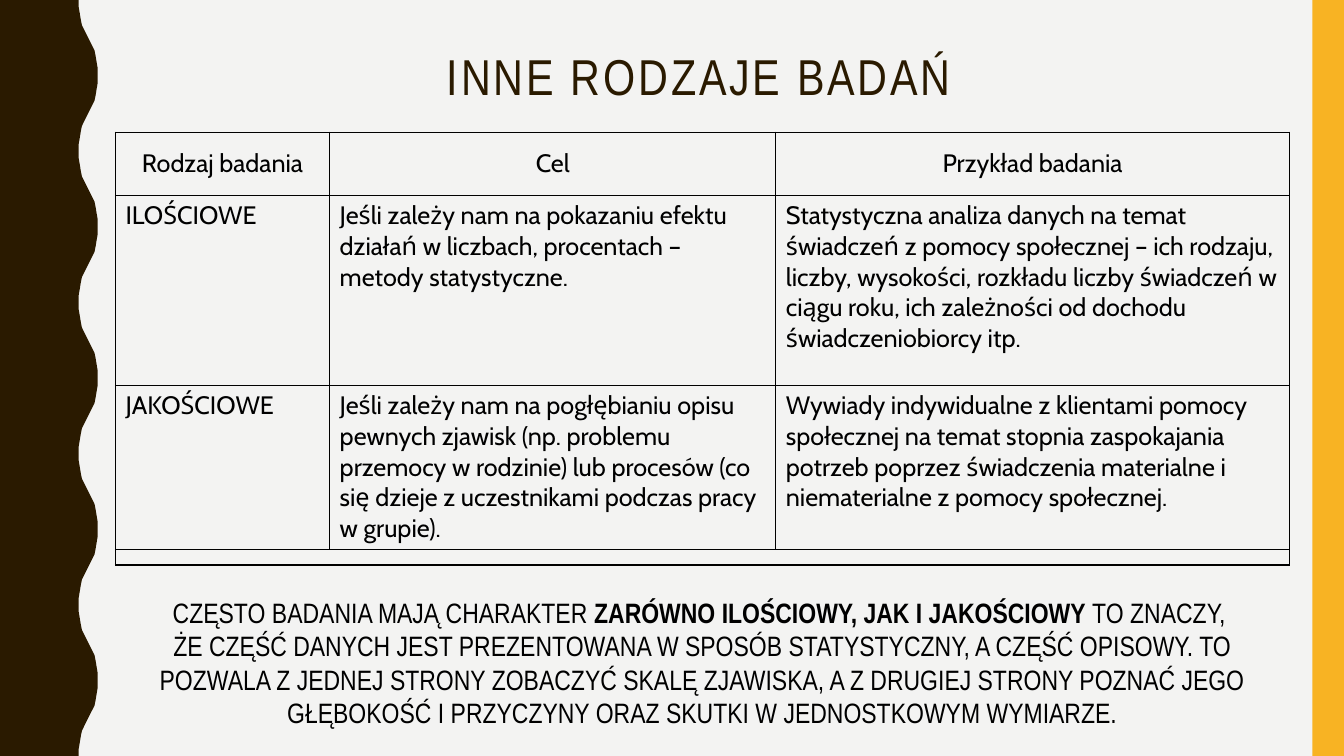
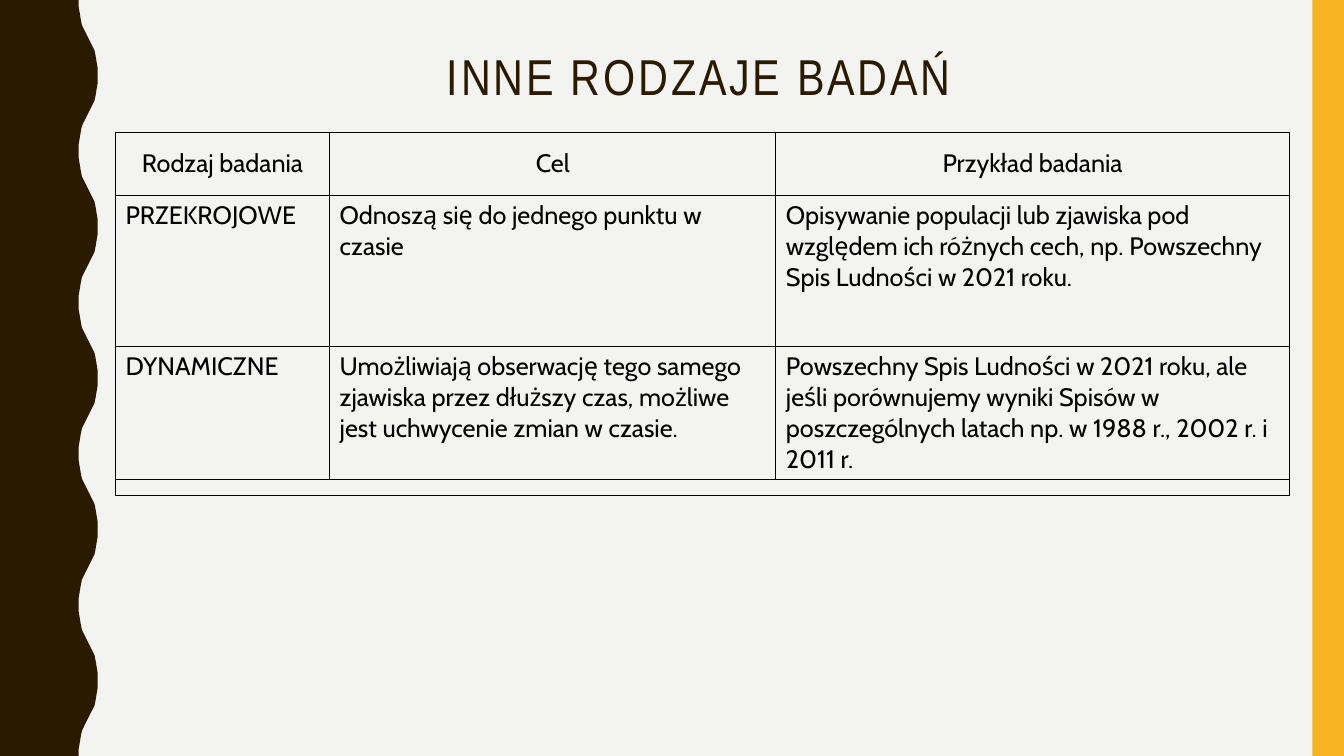
from dataclasses import dataclass

from lxml import etree
from pptx import Presentation
from pptx.dml.color import RGBColor
from pptx.enum.shapes import MSO_SHAPE
from pptx.enum.text import MSO_ANCHOR, MSO_AUTO_SIZE, PP_ALIGN
from pptx.oxml import parse_xml
from pptx.oxml.ns import nsdecls
from pptx.presentation import Presentation as Deck
from pptx.shapes.autoshape import Shape
from pptx.slide import Slide
from pptx.table import _Cell as Cell
from pptx.text.text import _Paragraph as Para
from pptx.util import Emu, Pt

RECT = MSO_SHAPE.RECTANGLE
MIDDLE, TOP = MSO_ANCHOR.MIDDLE, MSO_ANCHOR.TOP
CENTER, LEFT = PP_ALIGN.CENTER, PP_ALIGN.LEFT
GROW, FIXED = MSO_AUTO_SIZE.SHAPE_TO_FIT_TEXT, MSO_AUTO_SIZE.NONE

PAPER = RGBColor(0xF3, 0xF3, 0xF2)
BROWN = RGBColor(0x2A, 0x1A, 0x00)
GOLD = RGBColor(0xF8, 0xB3, 0x23)
BLACK = RGBColor(0, 0, 0)
NARROW, CABIN = "Arial Narrow", "Cabin"

SCALE = 9525
WIDE, HIGH = 1280, 720
EDGE, SWELL, PERIOD = 75, 18, 144
BEND = [(0, 0), (0, 7), (1, 13), (2, 19), (3, 24), (5, 28), (7, 32), (9, 36)]
GRID_X, GRID_Y = 110, 126
COLS = (204, 425, 489)
HEAD = ("Rodzaj badania", "Cel", "Przykład badania")
TITLE = "INNE RODZAJE BADAŃ"


@dataclass(frozen=True)
class Span:
    text: str
    bold: bool = False
    split: bool = False


@dataclass(frozen=True)
class Page:
    rows: tuple[tuple[str, str, str], ...]
    highs: tuple[int, ...]
    note: tuple[Span, ...] = ()


PAGES = (
    Page(
        (
            (
                "ILOŚCIOWE",
                "Jeśli zależy nam na pokazaniu efektu działań w liczbach, "
                "procentach – metody statystyczne.",
                "Statystyczna analiza danych na temat świadczeń z pomocy "
                "społecznej – ich rodzaju, liczby, wysokości, rozkładu liczby "
                "świadczeń w ciągu roku, ich zależności od dochodu "
                "świadczeniobiorcy itp.",
            ),
            (
                "JAKOŚCIOWE",
                "Jeśli zależy nam na pogłębianiu opisu pewnych zjawisk (np. "
                "problemu przemocy w rodzinie) lub procesów (co się dzieje "
                "z uczestnikami podczas pracy w grupie).",
                "Wywiady indywidualne z klientami pomocy społecznej na temat "
                "stopnia zaspokajania\n"
                "potrzeb poprzez świadczenia materialne i niematerialne "
                "z pomocy społecznej.",
            ),
        ),
        (60, 181, 124, 15),
        (
            Span("CZĘSTO BADANIA MAJĄ CHARAKTER "),
            Span("ZARÓWNO ILOŚCIOWY, JAK I JAKOŚCIOWY ", bold=True),
            Span("TO ZNACZY, ", split=True),
            Span(
                "ŻE CZĘŚĆ DANYCH JEST PREZENTOWANA W SPOSÓB STATYSTYCZNY, "
                "A CZĘŚĆ OPISOWY. TO POZWALA Z JEDNEJ STRONY ZOBACZYĆ SKALĘ "
                "ZJAWISKA, A Z DRUGIEJ STRONY POZNAĆ JEGO GŁĘBOKOŚĆ "
                "I PRZYCZYNY ORAZ SKUTKI W JEDNOSTKOWYM WYMIARZE."
            ),
        ),
    ),
    Page(
        (
            (
                "PRZEKROJOWE",
                "Odnoszą się do jednego punktu w czasie",
                "Opisywanie populacji lub zjawiska pod względem ich różnych "
                "cech, np. Powszechny Spis Ludności w 2021 roku.",
            ),
            (
                "DYNAMICZNE",
                "Umożliwiają obserwację tego samego zjawiska przez dłuższy "
                "czas, możliwe jest uchwycenie zmian w czasie.",
                "Powszechny Spis Ludności w 2021 roku, ale jeśli porównujemy "
                "wyniki Spisów w poszczególnych latach np. w 1988 r., 2002 r. "
                "i 2011 r.",
            ),
        ),
        (60, 144, 124, 15),
    ),
)


def px(size: int) -> Emu:
    return Emu(size * SCALE)


def box(x: int, y: int, wide: int, high: int) -> tuple[Emu, ...]:
    return px(x), px(y), px(wide), px(high)


def style(para: Para, face: str, size: int, color: RGBColor, align: PP_ALIGN) -> None:
    para.alignment = align
    para.font.name = face
    para.font.size = Pt(size)
    para.font.color.rgb = color


def paint(shape: Shape, color: RGBColor) -> None:
    shape.shadow.inherit = False
    shape.fill.solid()
    shape.fill.fore_color.rgb = color
    shape.line.fill.background()


def wave() -> list[tuple[int, int]]:
    half = BEND + [(SWELL - x, PERIOD // 2 - y) for x, y in BEND[-2::-1]]
    full = half + [(x, PERIOD - y) for x, y in half[-2::-1]]
    return [
        (EDGE + x, top + y) for top in range(0, HIGH, PERIOD) for x, y in full
    ]


def add_bands(deck: Deck, slide: Slide) -> None:
    form = slide.shapes.build_freeform(0, 0, scale=SCALE)
    form.add_line_segments(wave() + [(0, HIGH)], close=True)
    left = form.convert_to_shape()
    right = slide.shapes.add_shape(RECT, *box(WIDE - 30, 0, 30, HIGH))
    tree = deck.slide_master.element.cSld.spTree
    for spot, (band, color) in enumerate(((left, BROWN), (right, GOLD)), 2):
        paint(band, color)
        tree.insert(spot, band.element)


def add_title(slide: Slide) -> None:
    title = slide.shapes.title
    title.left, title.top, title.width, title.height = box(132, 40, 1068, 70)
    frame = title.text_frame
    frame.text = TITLE
    frame.vertical_anchor = MIDDLE
    frame.auto_size = FIXED
    para = frame.paragraphs[0]
    style(para, NARROW, 36, BROWN, CENTER)
    para.line_spacing = 0.9
    para.runs[0].font.element.set("spc", "200") if hasattr(
        para.runs[0].font, "element"
    ) else para.runs[0]._r.get_or_add_rPr().set("spc", "200")


def add_edges(cell: Cell) -> None:
    props = cell._tc.get_or_add_tcPr()
    for spot, side in enumerate("LRTB"):
        line = parse_xml(f'<a:ln{side} {nsdecls("a")} w="12700"><a:solidFill/></a:ln{side}>')
        etree.SubElement(line[0], line[0].tag.replace("solidFill", "srgbClr"), val=str(BLACK))
        props.insert(spot, line)


def fill_cell(cell: Cell, text: str, head: bool, size: int) -> None:
    cell.fill.background()
    cell.text = text
    cell.vertical_anchor = MIDDLE if head else TOP
    for para in cell.text_frame.paragraphs:
        style(para, CABIN, size, BLACK, CENTER if head else LEFT)
    add_edges(cell)


def add_grid(slide: Slide, page: Page) -> None:
    rows = (HEAD, *page.rows, ("", "", ""))
    area = box(GRID_X, GRID_Y, sum(COLS), sum(page.highs))
    grid = slide.shapes.add_table(len(rows), len(COLS), *area).table
    grid.first_row = grid.horz_banding = False
    for col, wide in zip(grid.columns, COLS):
        col.width = px(wide)
    for row, high in zip(grid.rows, page.highs):
        row.height = px(high)
    last = len(rows) - 1
    for r, texts in enumerate(rows):
        for c, text in enumerate(texts):
            cell = grid.cell(r, c)
            fill_cell(cell, text, r == 0, 6 if r == last else 18)
            if r == last:
                cell.margin_top = cell.margin_bottom = 0
                tail = cell.text_frame.paragraphs[0]._p.get_or_add_endParaRPr()
                tail.set("sz", "600")
    grid.cell(last, 0).merge(grid.cell(last, len(COLS) - 1))


def add_note(slide: Slide, spans: tuple[Span, ...]) -> None:
    frame = slide.shapes.add_textbox(*box(GRID_X, 562, sum(COLS), 139)).text_frame
    frame.word_wrap = True
    frame.auto_size = GROW
    para = frame.paragraphs[0]
    style(para, NARROW, 20, BLACK, CENTER)
    for span in spans:
        run = para.add_run()
        run.text = span.text
        run.font.bold = span.bold
        if span.split:
            para.add_line_break()


def main() -> None:
    deck = Presentation()
    deck.slide_width, deck.slide_height = px(WIDE), px(HIGH)
    back = deck.slide_master.background.fill
    back.solid()
    back.fore_color.rgb = PAPER
    for page in PAGES:
        slide = deck.slides.add_slide(deck.slide_layouts[5])
        if page is PAGES[0]:
            add_bands(deck, slide)
        add_title(slide)
        add_grid(slide, page)
        if page.note:
            add_note(slide, page.note)
    deck.save("out.pptx")


if __name__ == "__main__":
    main()
